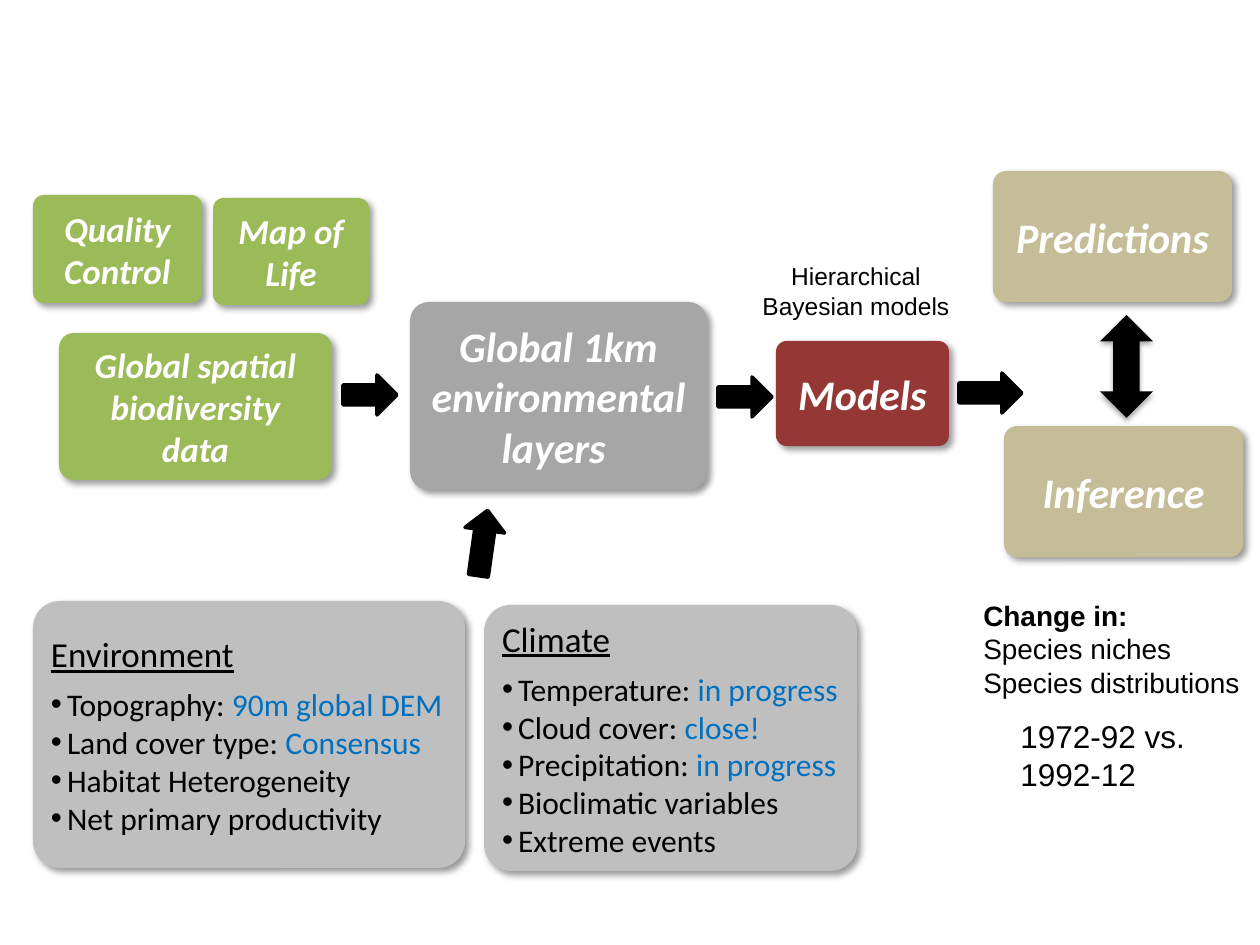
from lxml import etree
from pptx import Presentation
from pptx.dml.color import RGBColor
from pptx.enum.shapes import MSO_SHAPE
from pptx.enum.text import MSO_ANCHOR, MSO_AUTO_SIZE, PP_ALIGN
from pptx.oxml.ns import qn
from pptx.util import Pt

ROUND, RECT = MSO_SHAPE.ROUNDED_RECTANGLE, MSO_SHAPE.RECTANGLE
RIGHT, UPDOWN = MSO_SHAPE.RIGHT_ARROW, MSO_SHAPE.UP_DOWN_ARROW
MIDDLE, GROW = MSO_ANCHOR.MIDDLE, MSO_AUTO_SIZE.SHAPE_TO_FIT_TEXT
LEFT, CENTER = PP_ALIGN.LEFT, PP_ALIGN.CENTER

BLACK = RGBColor(0x00, 0x00, 0x00)
WHITE = RGBColor(0xFF, 0xFF, 0xFF)
GREEN = RGBColor(0x9B, 0xBB, 0x59)
GRAY = RGBColor(0xA6, 0xA6, 0xA6)
SILVER = RGBColor(0xBF, 0xBF, 0xBF)
RED = RGBColor(0x95, 0x37, 0x35)
TAN = RGBColor(0xC4, 0xBD, 0x97)
BLUE = RGBColor(0x00, 0x70, 0xC0)

SCALE = 914400 / 126


def px(*nums):
    return [round(n * SCALE) for n in nums]


def style(run, size, color, face="Calibri", bold=False, italic=False):
    font = run.font
    font.name, font.size = face, Pt(size)
    font.bold, font.italic = bold, italic
    font.color.rgb = color


def shade(shape, alpha, blur, dist, angle):
    effects = shape._element.spPr.find(qn("a:effectLst"))
    outer = etree.SubElement(
        effects, qn("a:outerShdw"), blurRad=str(Pt(blur)), dist=str(Pt(dist)),
        dir=str(angle * 60000), algn="tl", rotWithShape="0")
    color = etree.SubElement(outer, qn("a:srgbClr"), val=str(BLACK))
    etree.SubElement(color, qn("a:alpha"), val=str(alpha * 1000))


def block(shapes, kind, box, fill):
    shape = shapes.add_shape(kind, *px(*box))
    shape.shadow.inherit = False
    shape.fill.solid()
    shape.fill.fore_color.rgb = fill
    shape.line.fill.background()
    return shape


def card(slide, box, fill):
    group = slide.shapes.add_group_shape()
    back = block(group.shapes, ROUND, box, fill)
    back.adjustments[0] = 0.1
    shade(back, 40, 4, 3, 45)
    x, y, w, h = box
    gap = 0.03 * min(w, h)
    front = block(group.shapes, RECT, (x + gap, y + gap, w - 2 * gap, h - 2 * gap), fill)
    frame = front.text_frame
    frame.word_wrap = True
    frame.vertical_anchor = MIDDLE
    frame.margin_left, frame.margin_top, frame.margin_right, frame.margin_bottom = px(10, 10, 10, 10)
    return frame


def stage(slide, box, fill, text, size):
    frame = card(slide, box, fill)
    frame.text = text
    para = frame.paragraphs[0]
    para.alignment = CENTER
    style(para.runs[0], size, WHITE, bold=True, italic=True)


def panel(slide, box, title, items):
    frame = card(slide, box, SILVER)
    frame.text = title
    head = frame.paragraphs[0]
    head.alignment = LEFT
    head.space_after = Pt(6)
    style(head.runs[0], 20, BLACK)
    head.runs[0].font.underline = True
    indent = px(16)[0]
    for label, state in items:
        para = frame.add_paragraph()
        para.alignment = LEFT
        props = para._p.get_or_add_pPr()
        props.set("marL", str(indent))
        props.set("indent", str(-indent))
        etree.SubElement(props, qn("a:buFont"), typeface="Arial")
        etree.SubElement(props, qn("a:buChar"), char="•")
        for text, color in ((label, BLACK), (state, BLUE)):
            if text:
                run = para.add_run()
                run.text = text
                style(run, 18, color)


def note(slide, box, lines, size, align=LEFT, lead=False, wrap=True):
    frame = slide.shapes.add_textbox(*px(*box)).text_frame
    frame.word_wrap = wrap
    frame.auto_size = GROW
    frame.text = "\n".join(lines)
    for i, para in enumerate(frame.paragraphs):
        para.alignment = align
        style(para.runs[0], size, BLACK, "Arial", bold=lead and i == 0)


def arrow(slide, box, turn=0):
    shape = block(slide.shapes, RIGHT, box, BLACK)
    shape.line.color.rgb = BLACK
    shape.line.width = Pt(2)
    shape.rotation = turn


def link(slide, box):
    shade(block(slide.shapes, UPDOWN, box, BLACK), 35, 3.1, 1.8, 90)


def main():
    deck = Presentation()
    deck.slide_width, deck.slide_height = px(1260, 945)
    slide = deck.slides.add_slide(deck.slide_layouts[6])

    for box, fill, text, size in (
        ((410, 302, 297, 188), GRAY, "Global 1km environmental layers ", 24),
        ((59, 333, 273, 147), GREEN, "Global spatial biodiversity data", 20),
        ((776, 341, 173, 105), RED, "Models", 24),
        ((33, 195, 169, 108), GREEN, "Quality Control", 20),
        ((213, 198, 156, 107), GREEN, "Map of Life", 20),
        ((993, 171, 239, 131), TAN, "Predictions", 24),
        ((1004, 426, 239, 131), TAN, "Inference", 24),
    ):
        stage(slide, box, fill, text, size)

    note(slide, (746, 255, 220, 72), ["Hierarchical Bayesian models"], 14, CENTER)
    link(slide, (1100, 315, 53, 103))

    panel(slide, (33, 601, 432, 267), "Environment", (
        ("Topography: ", "90m global DEM"),
        ("Land cover type: ", "Consensus"),
        ("Habitat Heterogeneity", ""),
        ("Net primary productivity", ""),
    ))
    panel(slide, (484, 605, 373, 266), "Climate", (
        ("Temperature: ", "in progress"),
        ("Cloud cover: ", "close!"),
        ("Precipitation: ", "in progress"),
        ("Bioclimatic variables", ""),
        ("Extreme events", ""),
    ))

    for x, y, w in ((959, 373, 63), (343, 375, 54), (718, 377, 54)):
        arrow(slide, (x, y, w, 40))
    note(slide, (971, 592, 289, 115),
         ["Change in:", "Species niches", "Species distributions"], 16, lead=True)
    note(slide, (1008, 711, 192, 89), ["1972-92 vs.", "1992-12"], 18, wrap=False)
    arrow(slide, (450, 523, 66, 40), 278)

    deck.save("out.pptx")


if __name__ == "__main__":
    main()
